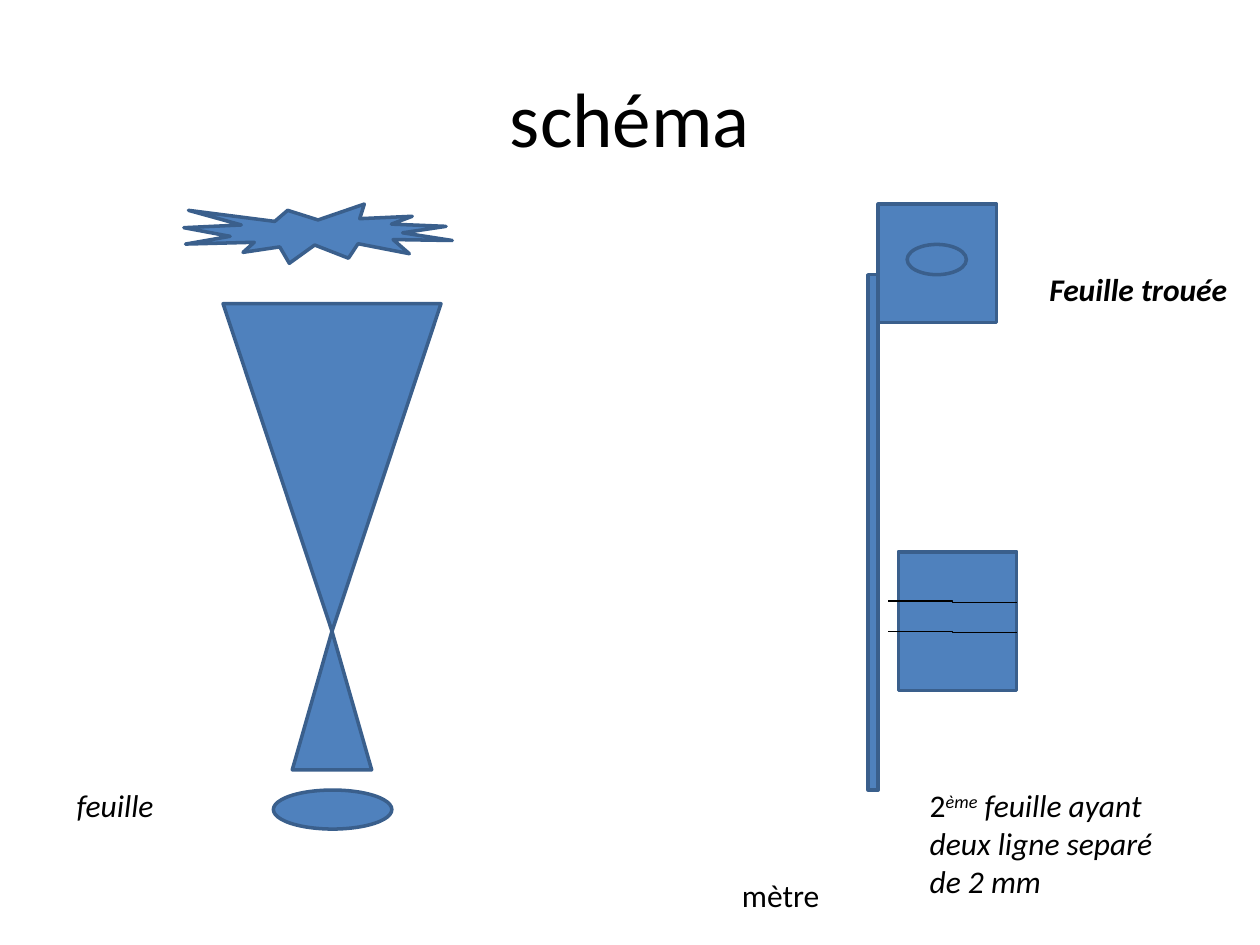
from lxml import etree
from pptx import Presentation
from pptx.dml.color import RGBColor
from pptx.enum.shapes import MSO_CONNECTOR, MSO_SHAPE
from pptx.enum.text import MSO_ANCHOR, MSO_AUTO_SIZE, PP_ALIGN
from pptx.oxml.ns import qn
from pptx.util import Inches, Pt

TRIANGLE = MSO_SHAPE.ISOSCELES_TRIANGLE
OVAL = MSO_SHAPE.OVAL
RECT = MSO_SHAPE.RECTANGLE
STAR = MSO_SHAPE.EXPLOSION1
ELBOW = MSO_CONNECTOR.ELBOW
MIDDLE = MSO_ANCHOR.MIDDLE
GROW = MSO_AUTO_SIZE.SHAPE_TO_FIT_TEXT
CENTER = PP_ALIGN.CENTER
COLORS = {"fill": "4F81BD", "outline": "3A5F8C", "text": "000000"}


def add_run(p, text, size=18, bold=False, italic=False, superscript=False):
    r = p.add_run()
    r.text = text
    r.font.name = "Calibri"
    r.font.size = Pt(size)
    r.font.bold = bold
    r.font.italic = italic
    r.font.color.rgb = RGBColor.from_string(COLORS["text"])
    if superscript:
        r._r.get_or_add_rPr().set("baseline", "30000")


prs = Presentation()
prs.slide_width, prs.slide_height = Inches(10), Inches(7.5)
s = prs.slides.add_slide(prs.slide_layouts[5])

title = s.shapes.title
title.left, title.top = Inches(0.5), Inches(0.3)
title.width, title.height = Inches(9), Inches(1.25)
title.text_frame.vertical_anchor = MIDDLE
p = title.text_frame.paragraphs[0]
p.alignment = CENTER
add_run(p, "schéma", size=44)

shapes = [
    # Light source, its two cones and the sheet
    (TRIANGLE, 1.77, 2.41, 1.73, 2.6, 180),
    (TRIANGLE, 2.32, 5.01, 0.63, 1.1, 0),
    (OVAL, 2.17, 6.27, 0.94, 0.31, 0),
    (STAR, 1.46, 1.62, 2.13, 0.47, 0),
    # Ruler, pierced sheet with its hole, second sheet
    (RECT, 6.89, 2.18, 0.08, 4.09, 0),
    (RECT, 6.97, 1.62, 0.94, 0.94, 0),
    (OVAL, 7.2, 1.94, 0.47, 0.24, 0),
    (RECT, 7.13, 4.38, 0.94, 1.1, 0),
]
for kind, x, y, w, h, rotation in shapes:
    sp = s.shapes.add_shape(kind, Inches(x), Inches(y), Inches(w), Inches(h))
    sp.rotation = rotation
    sp.shadow.inherit = False
    sp.fill.solid()
    sp.fill.fore_color.rgb = RGBColor.from_string(COLORS["fill"])
    sp.line.color.rgb = RGBColor.from_string(COLORS["outline"])
    sp.line.width = Pt(2)

# Two lines drawn on the second sheet
for y in (4.77, 5.01):
    line = s.shapes.add_connector(
        ELBOW, Inches(7.05), Inches(y), Inches(8.07), Inches(y + 0.01))
    line.line.color.rgb = RGBColor.from_string(COLORS["text"])
    line.line.width = Pt(0.75)
    etree.SubElement(line._element.spPr, qn("a:effectLst"))

labels = [
    (0.51, 6.19, 1.1, 0.4, [("feuille", {"italic": True})]),
    (8.23, 2.09, 1.76, 0.4, [("Feuille trouée", {"bold": True, "italic": True})]),
    (5.79, 6.9, 1.02, 0.4, [("mètre", {})]),
    (7.28, 6.19, 2.05, 1.01, [
        ("2", {}),
        ("ème", {"italic": True, "superscript": True}),
        (" feuille ayant deux ligne separé de 2 mm", {"italic": True}),
    ]),
]
for x, y, w, h, runs in labels:
    tf = s.shapes.add_textbox(Inches(x), Inches(y), Inches(w), Inches(h)).text_frame
    tf.word_wrap = True
    tf.auto_size = GROW
    for text, style in runs:
        add_run(tf.paragraphs[0], text, **style)

prs.save("out.pptx")
